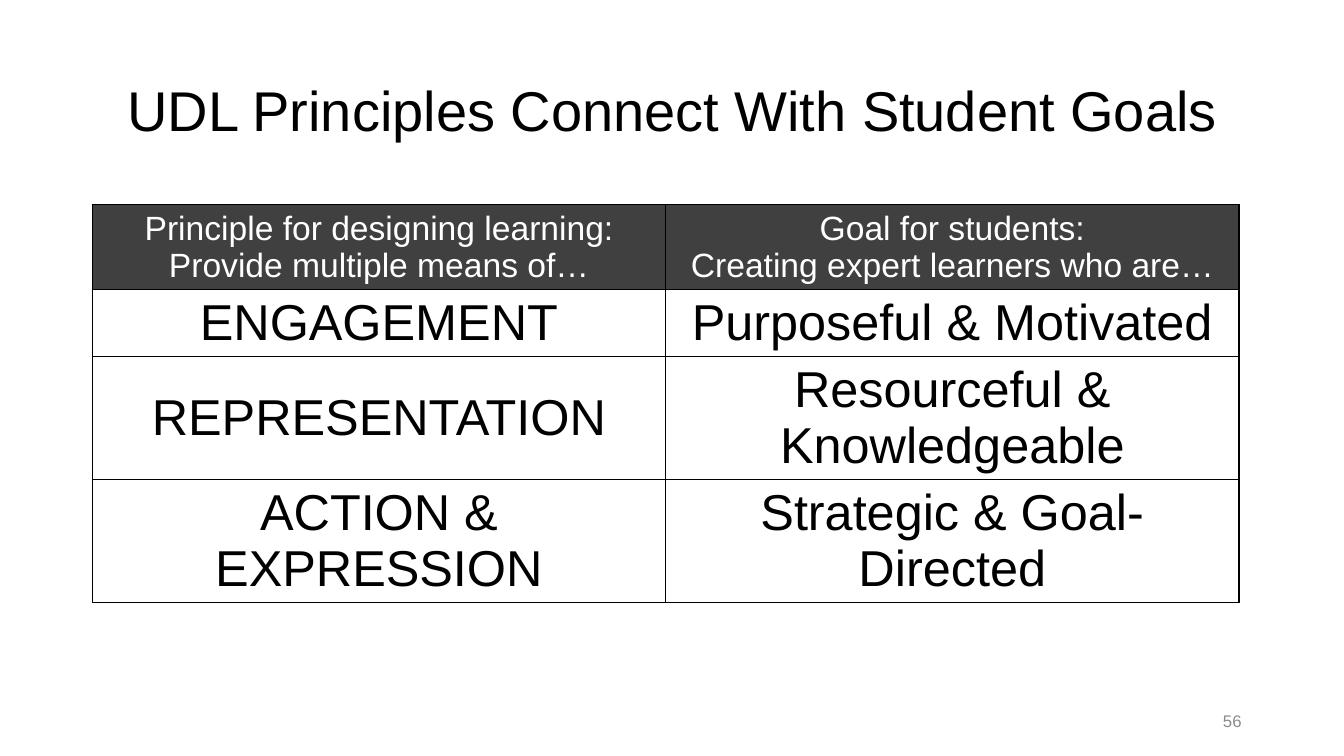
from dataclasses import dataclass
from lxml.etree import SubElement as Sub
from pptx import Presentation
from pptx.dml.color import RGBColor as Rgb
from pptx.enum.text import MSO_ANCHOR as Anchor, PP_ALIGN as Align
from pptx.oxml.ns import qn
from pptx.util import Pt


@dataclass(frozen=True)
class Theme:
    font: str = "Arial"
    ink: str = "000000"
    head: str = "404040"
    light: str = "FFFFFF"
    gray: str = "8C8C8C"
    title: int = 40
    body: int = 36
    label: int = 24
    small: int = 12


THEME = Theme()

# Each cell is a list of paragraphs
ROWS = [
    (["Principle for designing learning: Provide multiple means of…"],
     ["Goal for students:", "Creating expert learners who are…"]),
    (["ENGAGEMENT"], ["Purposeful & Motivated"]),
    (["REPRESENTATION"], ["Resourceful & Knowledgeable"]),
    (["ACTION & EXPRESSION"], ["Strategic & Goal-Directed"]),
]
HEIGHTS = [60.5, 47, 88, 88]


def write(frame, lines, size, color, align=Align.CENTER, space=None):
    frame.word_wrap = True
    for i, line in enumerate(lines):
        para = frame.add_paragraph() if i else frame.paragraphs[0]
        para.alignment = align
        if space:
            para.line_spacing = space
        run = para.add_run()
        run.text = line
        run.font.name = THEME.font
        run.font.size = Pt(size)
        run.font.color.rgb = Rgb.from_string(color)


def border(cell, color, width):
    props = cell._tc.get_or_add_tcPr()
    for side in ("lnL", "lnR", "lnT", "lnB"):
        line = Sub(props, qn(f"a:{side}"), w=str(Pt(width)))
        fill = Sub(line, qn("a:solidFill"))
        Sub(fill, qn("a:srgbClr"), val=color)


def add_title(slide, box, text):
    shape = slide.shapes.title
    shape.left, shape.top, shape.width, shape.height = map(Pt, box)
    frame = shape.text_frame
    frame.vertical_anchor = Anchor.MIDDLE
    write(frame, [text], THEME.title, THEME.ink, space=0.9)


def add_goals(slide, box):
    x, y, wide, high = box
    table = slide.shapes.add_table(
        len(ROWS), 2, Pt(x), Pt(y), Pt(wide), Pt(high)).table
    for col in table.columns:
        col.width = Pt(wide / 2)
    for r, (row, tall) in enumerate(zip(ROWS, HEIGHTS)):
        table.rows[r].height = Pt(tall)
        for c, lines in enumerate(row):
            cell = table.cell(r, c)
            border(cell, THEME.ink, 1)
            if r == 0:
                cell.fill.solid()
                cell.fill.fore_color.rgb = Rgb.from_string(THEME.head)
                write(cell.text_frame, lines, THEME.label, THEME.light)
            else:
                cell.fill.background()
                write(cell.text_frame, lines, THEME.body, THEME.ink)
    # The one-line label sits midway in its tall row
    table.cell(2, 0).vertical_anchor = Anchor.MIDDLE


def add_number(slide, box, text):
    frame = slide.shapes.add_textbox(*map(Pt, box)).text_frame
    frame.vertical_anchor = Anchor.MIDDLE
    write(frame, [text], THEME.small, THEME.gray, Align.RIGHT)


def main():
    deck = Presentation()
    deck.slide_width, deck.slide_height = Pt(960), Pt(540)
    slide = deck.slides.add_slide(deck.slide_layouts[5])
    # Title, table and page number
    add_title(slide, (66, 28.75, 828, 104.4),
              "UDL Principles Connect With Student Goals")
    add_goals(slide, (66, 146.25, 819, sum(HEIGHTS)))
    add_number(slide, (678, 500.5, 216, 28.75), "56")
    deck.save("out.pptx")


if __name__ == "__main__":
    main()
